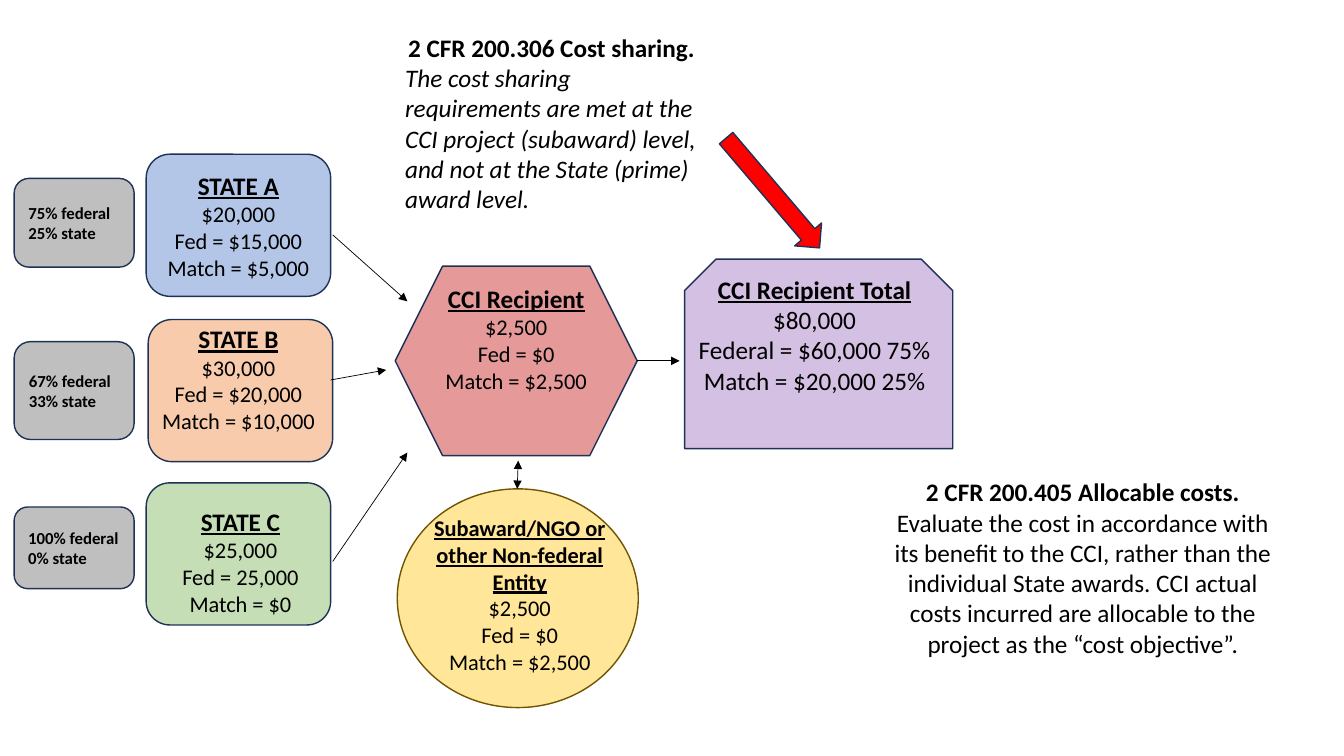
"""Builds the slide on cost sharing between state awards and the CCI project."""
from pptx import Presentation
from pptx.dml.color import RGBColor
from pptx.enum import shapes, text
from pptx.oxml import parse_xml
from pptx.oxml.ns import nsdecls, qn
from pptx.util import Inches, Pt

KIND = shapes.MSO_SHAPE
NAVY = "1E3256"
BLACK = "000000"

# kind, shape box, text box, fill, opacity, line, head size, body size, lines
CARDS = [
    (KIND.ROUNDED_RECTANGLE, (1.45, 1.53, 1.83, 1.41), (1.45, 1.64, 1.83, 1.21),
     "4472C4", 40, NAVY, 18, 16,
     ["STATE A", "$20,000", "Fed = $15,000", "Match = $5,000"]),
    (KIND.ROUNDED_RECTANGLE, (1.47, 3.17, 1.83, 1.41), (1.45, 3.16, 1.83, 1.21),
     "ED7D31", 40, NAVY, 18, 16,
     ["STATE B", "$30,000", "Fed = $20,000", "Match = $10,000"]),
    (KIND.ROUNDED_RECTANGLE, (1.45, 4.79, 1.83, 1.41), (1.47, 4.97, 1.83, 1.21),
     "70AD47", 40, NAVY, 18, 16,
     ["STATE C", "$25,000", "Fed = 25,000", "Match = $0"]),
    (KIND.HEXAGON, (3.92, 2.64, 2.4, 1.88), (4.13, 2.76, 1.98, 1.51),
     "C00000", 40, NAVY, 18, 16,
     ["CCI Recipient", "$2,500", "Fed = $0", "Match = $2,500"]),
    (KIND.SNIP_2_SAME_RECTANGLE, (6.79, 2.57, 2.66, 1.88), (6.81, 2.67, 2.54, 1.62),
     "7030A0", 30, NAVY, 18, 18,
     ["CCI Recipient Total", "$80,000", "Federal = $60,000 75%", "Match = $20,000 25%"]),
    (KIND.OVAL, (3.94, 4.85, 2.39, 2.17), (4.2, 5.05, 1.91, 1.88),
     "FFE699", 100, "705400", 16, 16,
     ["Subaward/NGO or other Non-federal Entity", "$2,500", "Fed = $0", "Match = $2,500"]),
]

# text box, body centred, body italic, lines
NOTES = [
    ((3.92, 0.27, 3.1, 1.92), False, True,
     ["2 CFR 200.306 Cost sharing.",
      "The cost sharing requirements are met at the CCI project (subaward) level, "
      "and not at the State (prime) award level."]),
    ((8.69, 4.68, 4.1, 1.92), True, False,
     ["2 CFR 200.405 Allocable costs.",
      "Evaluate the cost in accordance with its benefit to the CCI, rather than the "
      "individual State awards. CCI actual costs incurred are allocable to the "
      "project as the “cost objective”."]),
]

# top, height, lines
SHARES = [
    (1.77, 0.88, ["75% federal", "25% state"]),
    (3.39, 0.97, ["67% federal", "33% state"]),
    (5.03, 0.81, ["100% federal", "0% state"]),
]

# start, end, arrowheads
LINKS = [
    ((5.14, 4.57), (5.13, 4.85), ("headEnd", "tailEnd")),
    ((6.32, 3.58), (6.74, 3.58), ("tailEnd",)),
    ((3.3, 2.33), (4.04, 2.99), ("tailEnd",)),
    ((3.28, 3.77), (3.83, 3.67), ("tailEnd",)),
    ((3.3, 5.57), (4.04, 4.49), ("tailEnd",)),
]


def paint(color, hue):
    color.rgb = RGBColor.from_string(hue)


def inch(nums):
    return [Inches(n) for n in nums]


def draw(home, kind, box, fill, line=NAVY, alpha=100):
    shape = home.add_shape(kind, *inch(box))
    shape.shadow.inherit = False
    shape.fill.solid()
    paint(shape.fill.fore_color, fill)
    paint(shape.line.color, line)
    shape.line.width = Pt(1)
    if alpha < 100:
        hue = shape.fill._xPr.find(".//" + qn("a:srgbClr"))
        hue.append(parse_xml(f'<a:alpha {nsdecls("a")} val="{alpha * 1000}"/>'))
    return shape


def write(frame, lines, sizes, bolds, center=(True, True), under=False, slant=False):
    frame.word_wrap = True
    frame.text = "\n".join(lines)
    for num, para in enumerate(frame.paragraphs):
        part = min(num, 1)
        para.alignment = text.PP_ALIGN.CENTER if center[part] else text.PP_ALIGN.LEFT
        for run in para.runs:
            font = run.font
            font.name = "Calibri"
            font.size = Pt(sizes[part])
            font.bold = bolds[part]
            font.underline = under and part == 0
            font.italic = slant and part == 1
            paint(font.color, BLACK)


def label(home, box, *args, **more):
    frame = home.add_textbox(*inch(box)).text_frame
    write(frame, *args, **more)
    frame.auto_size = text.MSO_AUTO_SIZE.SHAPE_TO_FIT_TEXT


def link(home, start, end, heads):
    line = home.add_connector(shapes.MSO_CONNECTOR.STRAIGHT, *inch(start + end))
    paint(line.line.color, BLACK)
    line.line.width = Pt(0.5)
    for head in heads:
        line.line._get_or_add_ln().append(
            parse_xml(f'<a:{head} {nsdecls("a")} type="triangle"/>'))
    line._element.spPr.append(parse_xml(f'<a:effectLst {nsdecls("a")}/>'))


def main():
    deck = Presentation()
    deck.slide_width, deck.slide_height = inch((13.33, 7.5))
    home = deck.slides.add_slide(deck.slide_layouts[6]).shapes

    for kind, box, area, fill, alpha, line, head, body, lines in CARDS:
        group = home.add_group_shape().shapes
        draw(group, kind, box, fill, line, alpha)
        label(group, area, lines, (head, body), (True, False), under=True)

    for box, center, slant, lines in NOTES:
        label(home, box, lines, (18, 18), (True, False), (True, center), slant=slant)

    for start, end, heads in LINKS:
        link(home, start, end, heads)

    arrow = draw(home, KIND.DOWN_ARROW, (7.49, 1.2, 0.35, 1.43), "FF0000")
    arrow.rotation = 319.6

    for top, height, lines in SHARES:
        share = draw(home, KIND.ROUNDED_RECTANGLE, (0.14, top, 1.19, height), "BFBFBF")
        write(share.text_frame, lines, (12, 12), (True, True), (False, False))
        share.text_frame.vertical_anchor = text.MSO_ANCHOR.MIDDLE

    deck.save("out.pptx")


if __name__ == "__main__":
    main()
